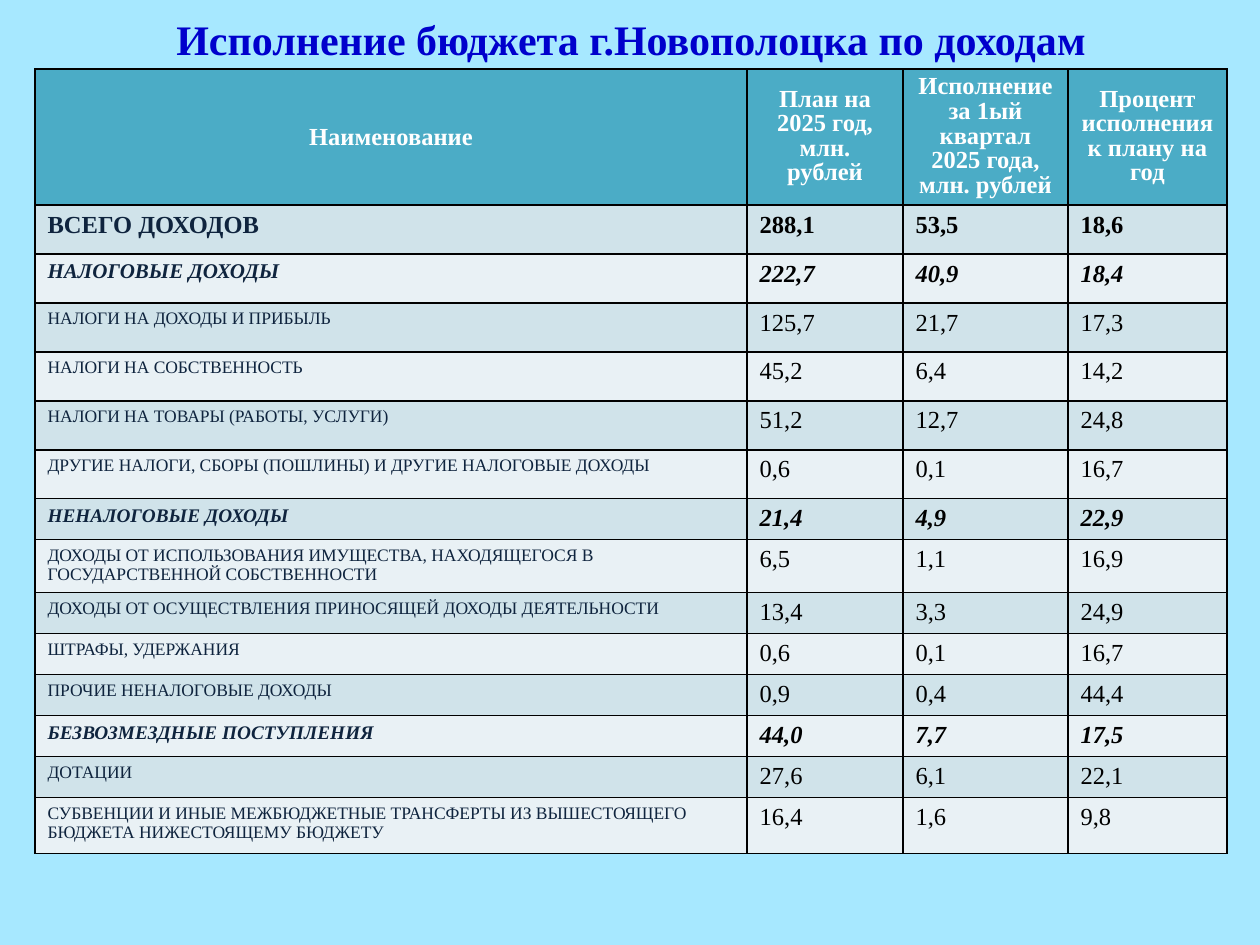
from lxml import etree
from pptx import Presentation
from pptx import util as u
from pptx.dml.color import RGBColor
from pptx.enum import text
from pptx.oxml import ns

PX = u.Inches(1) / 126
FONT = "Times New Roman"
SKY = RGBColor(0xA7, 0xE8, 0xFF)
BLUE = RGBColor(0x00, 0x00, 0xCC)
TEAL = RGBColor(0x4B, 0xAC, 0xC6)
BANDS = RGBColor(0xD0, 0xE3, 0xEA), RGBColor(0xE9, 0xF1, 0xF5)
NAVY = RGBColor(0x0F, 0x24, 0x3E)
WHITE = RGBColor(0xFF, 0xFF, 0xFF)
BLACK = RGBColor(0x00, 0x00, 0x00)

TITLE = "Исполнение бюджета г.Новополоцка по доходам"
COLUMN_WIDTHS = 712, 156, 165, 159
HEADER_HEIGHT = 136
HEADERS = (
    "Наименование",
    "План на 2025 год, млн. рублей",
    "Исполнение за 1ый квартал 2025 года, млн. рублей",
    "Процент исполнения к плану на год",
)
STYLES = {
    "total": (14, True, False),
    "tax group": (12, True, True),
    "group": (11, True, True),
    "item": (10, False, False),
}
ROWS = (
    (49, "total", "ВСЕГО ДОХОДОВ", "288,1", "53,5", "18,6"),
    (49, "tax group", "НАЛОГОВЫЕ ДОХОДЫ", "222,7", "40,9", "18,4"),
    (49, "item", "НАЛОГИ НА ДОХОДЫ И ПРИБЫЛЬ", "125,7", "21,7", "17,3"),
    (49, "item", "НАЛОГИ НА СОБСТВЕННОСТЬ", "45,2", "6,4", "14,2"),
    (49, "item", "НАЛОГИ НА ТОВАРЫ (РАБОТЫ, УСЛУГИ)", "51,2", "12,7", "24,8"),
    (49, "item", "ДРУГИЕ НАЛОГИ, СБОРЫ (ПОШЛИНЫ) И ДРУГИЕ НАЛОГОВЫЕ ДОХОДЫ",
     "0,6", "0,1", "16,7"),
    (41, "group", "НЕНАЛОГОВЫЕ ДОХОДЫ", "21,4", "4,9", "22,9"),
    (53, "item", "ДОХОДЫ ОТ ИСПОЛЬЗОВАНИЯ ИМУЩЕСТВА, НАХОДЯЩЕГОСЯ В "
     "ГОСУДАРСТВЕННОЙ СОБСТВЕННОСТИ", "6,5", "1,1", "16,9"),
    (41, "item", "ДОХОДЫ ОТ ОСУЩЕСТВЛЕНИЯ ПРИНОСЯЩЕЙ ДОХОДЫ ДЕЯТЕЛЬНОСТИ",
     "13,4", "3,3", "24,9"),
    (41, "item", "ШТРАФЫ, УДЕРЖАНИЯ", "0,6", "0,1", "16,7"),
    (41, "item", "ПРОЧИЕ НЕНАЛОГОВЫЕ ДОХОДЫ", "0,9", "0,4", "44,4"),
    (41, "group", "БЕЗВОЗМЕЗДНЫЕ ПОСТУПЛЕНИЯ", "44,0", "7,7", "17,5"),
    (41, "item", "ДОТАЦИИ", "27,6", "6,1", "22,1"),
    (56, "item", "СУБВЕНЦИИ И ИНЫЕ МЕЖБЮДЖЕТНЫЕ ТРАНСФЕРТЫ ИЗ ВЫШЕСТОЯЩЕГО "
     "БЮДЖЕТА НИЖЕСТОЯЩЕМУ БЮДЖЕТУ", "16,4", "1,6", "9,8"),
)


def px(length):
    return u.Emu(round(length * PX))


def write(frame, words, size, color, bold=False, italic=False):
    frame.text = words
    para = frame.paragraphs[0]
    font = para.runs[0].font
    font.name = FONT
    font.size = u.Pt(size)
    font.bold = bold
    font.italic = italic
    font.color.rgb = color
    return para


def add_borders(cell):
    properties = cell._tc.get_or_add_tcPr()
    for side in ("lnL", "lnR", "lnT", "lnB"):
        line = etree.SubElement(properties, ns.qn(f"a:{side}"), w=str(u.Pt(1)))
        fill = etree.SubElement(line, ns.qn("a:solidFill"))
        etree.SubElement(fill, ns.qn("a:srgbClr"), val=str(BLACK))


def fill_cell(cell, color, words, *style):
    add_borders(cell)
    cell.fill.solid()
    cell.fill.fore_color.rgb = color
    return write(cell.text_frame, words, *style)


def place_title(page):
    title = page.shapes.title
    title.left, title.top, title.width, title.height = map(px, (64, 5, 1134, 40))
    frame = title.text_frame
    frame.auto_size = text.MSO_AUTO_SIZE.NONE
    frame.vertical_anchor = text.MSO_ANCHOR.MIDDLE
    para = write(frame, TITLE, 24, BLUE, True)
    para.alignment = text.PP_ALIGN.CENTER
    para.line_spacing = u.Pt(44)


def fill_header(table):
    table.rows[0].height = px(HEADER_HEIGHT)
    for column, words in enumerate(HEADERS):
        cell = table.cell(0, column)
        cell.vertical_anchor = text.MSO_ANCHOR.MIDDLE
        para = fill_cell(cell, TEAL, words, 14, WHITE, True)
        para.alignment = text.PP_ALIGN.CENTER
        if column:
            para.line_spacing = u.Pt(14)


def fill_rows(table):
    for index, (height, kind, name, *values) in enumerate(ROWS):
        size, bold, italic = STYLES[kind]
        band = BANDS[index % 2]
        row = table.rows[index + 1]
        row.height = px(height)
        fill_cell(row.cells[0], band, name, size, NAVY, bold, italic)
        for column, value in enumerate(values, 1):
            fill_cell(row.cells[column], band, value, 14, BLACK, bold, italic)


def add_budget_table(page):
    height = HEADER_HEIGHT + sum(row[0] for row in ROWS)
    table = page.shapes.add_table(
        len(ROWS) + 1, len(HEADERS),
        px(35), px(69), px(sum(COLUMN_WIDTHS)), px(height),
    ).table
    for column, width in zip(table.columns, COLUMN_WIDTHS):
        column.width = px(width)
    fill_header(table)
    fill_rows(table)


def main():
    deck = Presentation()
    deck.slide_width, deck.slide_height = px(1260), px(945)
    page = deck.slides.add_slide(deck.slide_layouts[5])
    page.background.fill.solid()
    page.background.fill.fore_color.rgb = SKY
    place_title(page)
    add_budget_table(page)
    deck.save("out.pptx")


if __name__ == "__main__":
    main()
